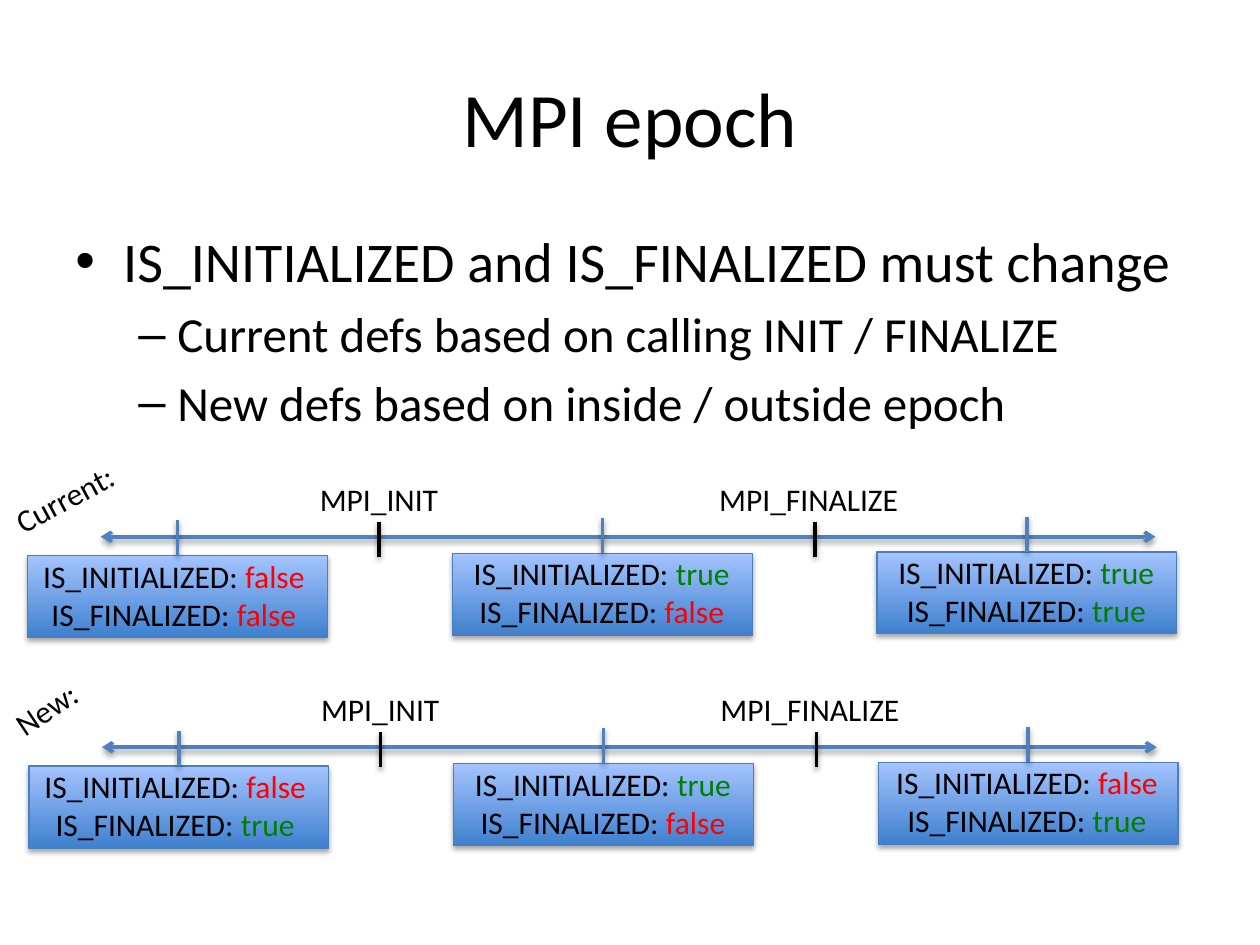
from lxml import etree
from pptx import Presentation
from pptx.dml.color import RGBColor
from pptx.enum import shapes, text
from pptx.oxml import ns
from pptx import util as u

PX = 9144
COLORS = {
    "text": "000000",
    "axis": "4F81BD",
    "outline": "4B7EBC",
    "light": "A4C4FF",
    "dark": "3F80CE",
    "true": "008000",
    "false": "FF0000",
}
BULLETS = [
    ("IS_INITIALIZED and IS_FINALIZED must change", 0, 32, "•", 38, -38),
    ("Current defs based on calling INIT / FINALIZE", 1, 28, "–", 81, -31),
    ("New defs based on inside / outside epoch", 1, 28, "–", 81, -31),
]
CALLS = [("MPI_INIT", 163, 116, 221), ("MPI_FINALIZE", 480, 164, 567)]
STATE_TOPS = (65, 63, 62)
STATE_PITCH = 337
TIMELINES = [
    {
        "name": ("Current:", -1, -1, 106, 331.7),
        "box": (0, 376),
        "states": [("false", "false", 1), ("true", "false", 6), ("true", "true", 6)],
    },
    {
        "name": ("New:", -1, -1, 74, 326.3),
        "box": (1, 543),
        "states": [("false", "true", 1), ("true", "false", 6), ("false", "true", 3)],
    },
]


def px(*lengths):
    return [u.Emu(length * PX) for length in lengths]


def rgb(name):
    return RGBColor.from_string(COLORS[name])


def set_format(target, values):
    for name, value in values.items():
        setattr(target, name, value)


def add_element(parent, tag, **attributes):
    return etree.SubElement(parent, ns.qn(tag), attributes)


def add_shadow(shape, distance, opacity):
    properties = shape._element.spPr
    effects = properties.find(ns.qn("a:effectLst"))
    if effects is None:
        effects = add_element(properties, "a:effectLst")
    shadow = add_element(effects, "a:outerShdw", blurRad="40000", dist=str(distance),
                         dir="5400000", rotWithShape="0")
    color = add_element(shadow, "a:srgbClr", val=COLORS["text"])
    add_element(color, "a:alpha", val=str(opacity * 1000))


def add_line(container, start, end, color, arrows=False):
    line = container.add_connector(shapes.MSO_CONNECTOR.STRAIGHT, *px(*start, *end))
    line.line.color.rgb = rgb(color)
    line.line.width = u.Pt(2)
    if arrows:
        outline = line.line._get_or_add_ln()
        for tag in ("a:headEnd", "a:tailEnd"):
            add_element(outline, tag, type="arrow")
    add_shadow(line, 20000, 38)


def add_run(paragraph, wording, size, color="text"):
    run = paragraph.add_run()
    run.text = wording
    set_format(run.font, {"name": "Calibri", "size": u.Pt(size)})
    run.font.color.rgb = rgb(color)


def add_text_box(container, box, **values):
    shape = container.add_textbox(*px(*box))
    set_format(shape.text_frame, values)
    return shape


def add_label(container, box, wording, rotation=0):
    label = add_text_box(container, box, word_wrap=False,
                         auto_size=text.MSO_AUTO_SIZE.SHAPE_TO_FIT_TEXT)
    add_run(label.text_frame.paragraphs[0], wording, 18)
    label.rotation = rotation


def add_title(slide, box):
    title = add_text_box(slide.shapes, box, word_wrap=True,
                         vertical_anchor=text.MSO_ANCHOR.MIDDLE)
    paragraph = title.text_frame.paragraphs[0]
    paragraph.alignment = text.PP_ALIGN.CENTER
    add_run(paragraph, "MPI epoch", 44)


def add_bullets(slide, box):
    frame = add_text_box(slide.shapes, box, word_wrap=True).text_frame
    for index, (wording, level, size, bullet, margin, indent) in enumerate(BULLETS):
        paragraph = frame.add_paragraph() if index else frame.paragraphs[0]
        set_format(paragraph, {"level": level, "space_before": u.Pt(size * 0.2)})
        properties = paragraph._p.get_or_add_pPr()
        properties.set("marL", str(margin * PX))
        properties.set("indent", str(indent * PX))
        add_element(properties, "a:buFont", typeface="Arial")
        add_element(properties, "a:buChar", char=bullet)
        add_run(paragraph, wording, size)


def add_state(slide, box, state):
    left, top, width, height = box
    initialized, finalized, inset = state
    group = slide.shapes.add_group_shape().shapes
    panel = group.add_shape(shapes.MSO_SHAPE.RECTANGLE, *px(*box))
    panel.fill.gradient()
    panel.fill.gradient_angle = 90
    for stop, color in zip(panel.fill.gradient_stops, ("dark", "light")):
        stop.color.rgb = rgb(color)
    panel.line.color.rgb = rgb("outline")
    panel.line.width = u.Pt(0.75)
    panel.shadow.inherit = False
    add_shadow(panel, 23000, 35)

    text_width = 230 if initialized == "false" else 225
    frame = add_text_box(group, (left + inset, top - 4, text_width, 71), word_wrap=False,
                         auto_size=text.MSO_AUTO_SIZE.SHAPE_TO_FIT_TEXT).text_frame
    paragraphs = [frame.paragraphs[0], frame.add_paragraph()]
    flags = [("IS_INITIALIZED: ", initialized), ("IS_FINALIZED: ", finalized)]
    for paragraph, (flag, value) in zip(paragraphs, flags):
        paragraph.alignment = text.PP_ALIGN.CENTER
        add_run(paragraph, flag, 18)
        add_run(paragraph, value, 18, value)

    center = left + width // 2
    add_line(group, (center, top - 28), (center, top), "axis")


def add_timeline(slide, box, name, states):
    left, top = box
    axis_left = left + 80
    add_line(slide.shapes, (axis_left, top + 50), (axis_left + 837, top + 50), "axis", True)
    for wording, offset, width, tick in CALLS:
        x = axis_left + tick
        add_line(slide.shapes, (x, top + 38), (x, top + 66), "text")
        add_label(slide.shapes, (axis_left + offset + 1, top, width, 40), wording)
    wording, x, y, width, rotation = name
    add_label(slide.shapes, (left + x, top + y, width, 40), wording, rotation)
    for index, (offset, state) in enumerate(zip(STATE_TOPS, states)):
        add_state(slide, (left + 22 + index * STATE_PITCH, top + offset, 238, 65), state)


def main():
    presentation = Presentation()
    set_format(presentation, {"slide_width": u.Emu(1000 * PX), "slide_height": u.Emu(750 * PX)})
    slide = presentation.slides.add_slide(presentation.slide_layouts[6])
    add_title(slide, (50, 30, 900, 125))
    add_bullets(slide, (50, 175, 900, 495))
    for timeline in TIMELINES:
        add_timeline(slide, **timeline)
    presentation.save("out.pptx")


if __name__ == "__main__":
    main()
